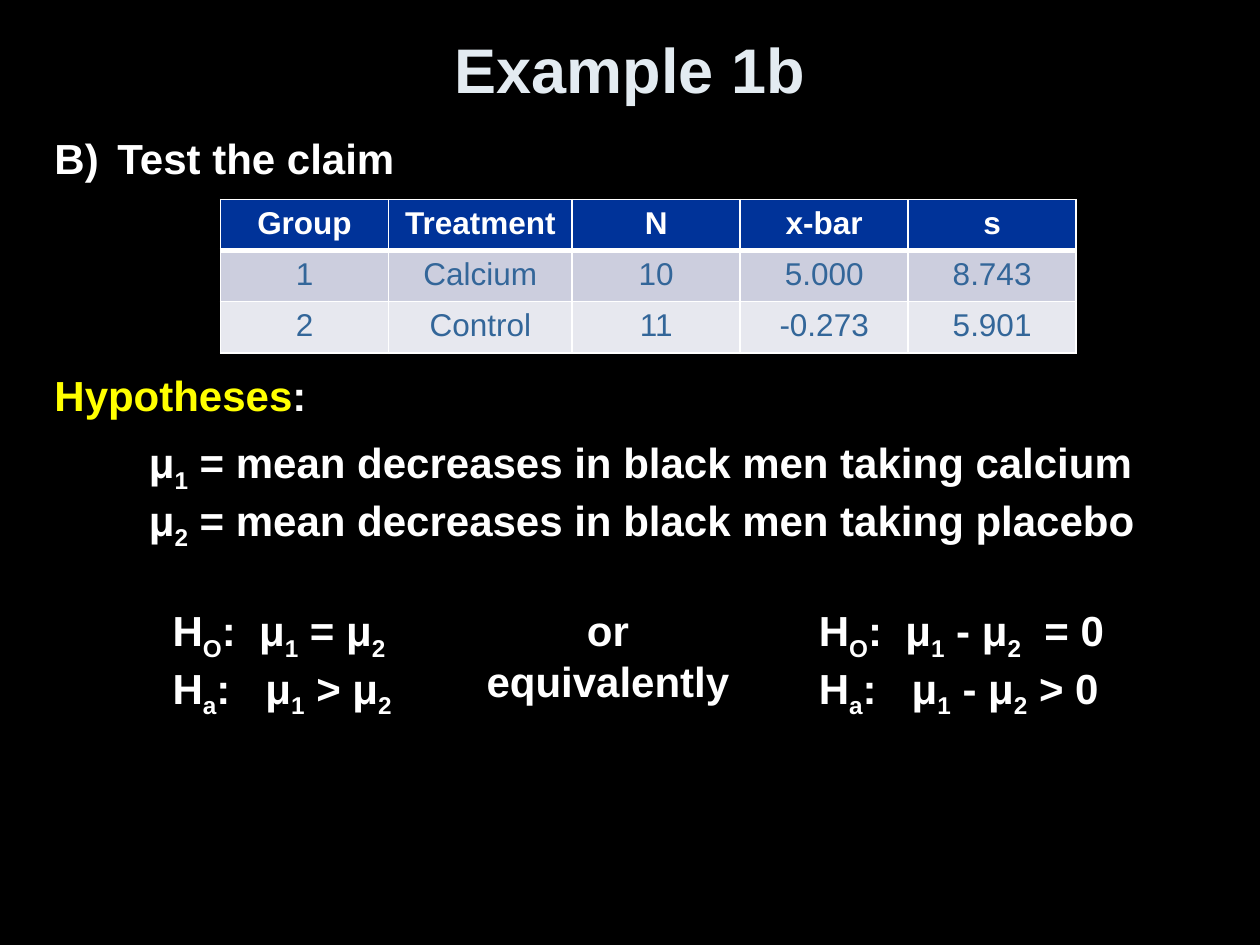
from lxml.etree import SubElement
from pptx import Presentation
from pptx.dml.color import RGBColor
from pptx.enum.text import MSO_ANCHOR, MSO_AUTO_SIZE, PP_ALIGN
from pptx.oxml.ns import qn
from pptx.util import Inches, Pt


def color(value):
    """Turn a hex string into a colour."""
    return RGBColor.from_string(value)


class Board:
    """Style and current slide, measured on a grid of 120 columns by 90 rows."""

    font, white, title_color = "Arial", "FFFFFF", "E3EBF1"
    accent, head, body_text = "FFFF00", "003399", "336699"
    bands = ("CCCEDE", "E7E8EF")

    def __init__(self, deck):
        """Add a black title-only slide."""
        self.unit = deck.slide_width / 120
        self.page = deck.slides.add_slide(deck.slide_layouts[5])
        self.page.background.fill.solid()
        self.page.background.fill.fore_color.rgb = color("000000")

    def grid(self, *values):
        """Convert grid steps to lengths."""
        return [round(value * self.unit) for value in values]

    def style(self, span, size=24, tint=white, bold=True):
        """Format one run."""
        span.font.name, span.font.size, span.font.bold = self.font, Pt(size), bold
        span.font.color.rgb = color(tint)

    def title(self, text, *place):
        """Place and format the title."""
        box = self.page.shapes.title
        box.left, box.top, box.width, box.height = self.grid(*place)
        box.text_frame.text = text
        box.text_frame.vertical_anchor = MSO_ANCHOR.MIDDLE
        para = box.text_frame.paragraphs[0]
        para.alignment = PP_ALIGN.CENTER
        self.style(para.runs[0], 36, self.title_color)

    def outline(self, claim, heading, gap, *place):
        """Write the lettered claim and, below a gap, the coloured heading."""
        frame = self.page.shapes.add_textbox(*self.grid(*place)).text_frame
        frame.word_wrap = True
        frame.text = claim
        first = frame.paragraphs[0]
        properties = first._p.get_or_add_pPr()
        properties.set("marL", str(Inches(0.5)))
        properties.set("indent", str(Inches(-0.5)))
        SubElement(properties, qn("a:buFont"), typeface=self.font)
        SubElement(properties, qn("a:buAutoNum"), type="alphaUcParenR", startAt="2")
        self.style(first.runs[0])
        second = frame.add_paragraph()
        second.space_before = Pt(gap)
        for text, tint in ((heading, self.accent), (":", self.white)):
            span = second.add_run()
            span.text = text
            self.style(span, tint=tint)

    def formulas(self, lines, *place, align=PP_ALIGN.LEFT):
        """Write lines in which an underscore lowers the next character."""
        frame = self.page.shapes.add_textbox(*self.grid(*place)).text_frame
        frame.word_wrap = False
        frame.auto_size = MSO_AUTO_SIZE.SHAPE_TO_FIT_TEXT
        for number, line in enumerate(lines):
            para = frame.add_paragraph() if number else frame.paragraphs[0]
            para.alignment = align
            start, *rest = line.split("_")
            pieces = [(start, 0)]
            for part in rest:
                pieces += [(part[0], -25000), (part[1:], 0)]
            for text, baseline in pieces:
                if text:
                    span = para.add_run()
                    span.text = text
                    self.style(span)
                    if baseline:
                        span._r.get_or_add_rPr().set("baseline", str(baseline))

    def border(self, cell, bottom):
        """Draw white lines around a cell."""
        properties = cell._tc.get_or_add_tcPr()
        for side, width in (("L", 1), ("R", 1), ("T", 1), ("B", bottom)):
            line = SubElement(properties, qn(f"a:ln{side}"), w=str(Pt(width)))
            SubElement(SubElement(line, qn("a:solidFill")), qn("a:srgbClr"), val=self.white)

    def table(self, rows, left, top, widths, height):
        """Build a table with a header row and banded rows."""
        place = self.grid(left, top, sum(widths), height * len(rows))
        table = self.page.shapes.add_table(len(rows), len(widths), *place).table
        for column, width in zip(table.columns, self.grid(*widths)):
            column.width = width
        for number, row in enumerate(rows):
            is_head = number == 0
            fill = self.head if is_head else self.bands[(number - 1) % 2]
            for cell, text in zip(table.rows[number].cells, row):
                cell.text_frame.text = text
                para = cell.text_frame.paragraphs[0]
                para.alignment = PP_ALIGN.CENTER
                self.style(para.runs[0], 18, self.white if is_head else self.body_text, is_head)
                self.border(cell, 3 if is_head else 1)
                cell.fill.solid()
                cell.fill.fore_color.rgb = color(fill)


def main():
    """Build the slide and save it."""
    deck = Presentation()
    deck.slide_width, deck.slide_height = Inches(10), Inches(7.5)
    board = Board(deck)
    board.title("Example 1b", 6, 1, 108, 11)
    board.outline("Test the claim", "Hypotheses", 107, 4, 12, 112, 32)
    board.table(
        [
            ("Group", "Treatment", "N", "x-bar", "s"),
            ("1", "Calcium", "10", "5.000", "8.743"),
            ("2", "Control", "11", "-0.273", "5.901"),
        ],
        21, 19, (16, 17.5, 16, 16, 16), 4.87,
    )
    board.formulas(
        [f"μ_{number} = mean decreases in black men taking {treatment}"
         for number, treatment in ((1, "calcium"), (2, "placebo"))],
        13, 41, 98.2, 10.9,
    )
    board.formulas(["H_O:  μ_1 = μ_2", "H_a:   μ_1 > μ_2"], 15.25, 57, 23.75, 10.9)
    board.formulas(["or", "equivalently"], 45, 57, 25.8, 10.9, align=PP_ALIGN.CENTER)
    board.formulas(["H_O:  μ_1 - μ_2  = 0", "H_a:   μ_1 - μ_2 > 0"], 76.8, 57, 30.25, 10.9)
    deck.save("out.pptx")


if __name__ == "__main__":
    main()
